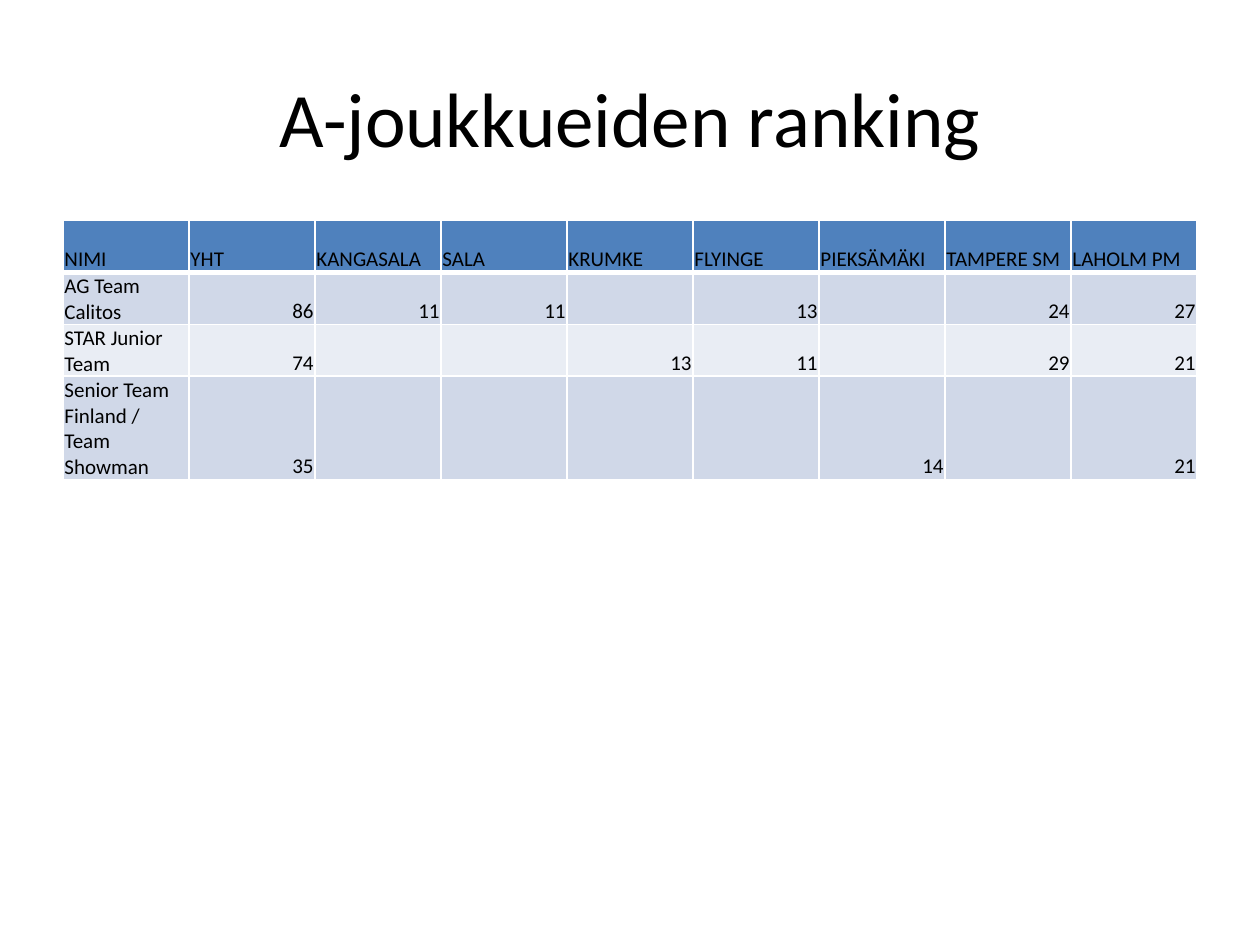
from lxml import etree
from pptx import Presentation
from pptx.dml.color import RGBColor
from pptx.enum.text import MSO_ANCHOR, PP_ALIGN
from pptx.oxml.ns import qn
from pptx.util import Cm, Pt

MIDDLE, BOTTOM = MSO_ANCHOR.MIDDLE, MSO_ANCHOR.BOTTOM
LEFT, CENTER, RIGHT = PP_ALIGN.LEFT, PP_ALIGN.CENTER, PP_ALIGN.RIGHT

BLACK = RGBColor(0x00, 0x00, 0x00)
WHITE = RGBColor(0xFF, 0xFF, 0xFF)
HEADER_BLUE = RGBColor(0x4F, 0x81, 0xBD)
BANDS = (RGBColor(0xD0, 0xD8, 0xE8), RGBColor(0xE9, 0xED, 0xF4))
FONT = "Calibri"

HEADER = ["NIMI", "YHT", "KANGASALA", "SALA", "KRUMKE", "FLYINGE",
          "PIEKSÄMÄKI", "TAMPERE SM", "LAHOLM PM"]
TEAMS = [
    ["AG Team Calitos", 86, 11, 11, None, 13, None, 24, 27],
    ["STAR Junior Team", 74, None, None, 13, 11, None, 29, 21],
    ["Senior Team Finland / Team Showman", 35, None, None, None, None, 14, None, 21],
]
ROW_SHARES = [1, 1, 1, 2]  # the last team name takes twice the height


def add_run(paragraph, text, size, align):
    paragraph.alignment = align
    run = paragraph.add_run()
    run.text = text
    run.font.name = FONT
    run.font.size = Pt(size)
    run.font.bold = False
    run.font.color.rgb = BLACK


def add_title(slide, left, top, width, height):
    title = slide.shapes.add_textbox(left, top, width, height).text_frame
    title.word_wrap = True
    title.vertical_anchor = MIDDLE
    add_run(title.paragraphs[0], "A-joukkueiden ranking", 44, CENTER)


def set_borders(cell, top, bottom):
    properties = cell._tc.get_or_add_tcPr()
    for side, points in (("L", 1), ("R", 1), ("T", top), ("B", bottom)):
        line = etree.SubElement(properties, qn(f"a:ln{side}"), w=str(Pt(points)))
        fill = etree.SubElement(line, qn("a:solidFill"))
        etree.SubElement(fill, qn("a:srgbClr"), val=str(WHITE))


def add_ranking(slide, left, top, width, height):
    rows = [HEADER] + TEAMS
    ranking = slide.shapes.add_table(
        len(rows), len(HEADER), left, top, width, height).table
    ranking.first_row = False
    ranking.horz_banding = False
    for column in ranking.columns:
        column.width = width // len(HEADER)

    for r, values in enumerate(rows):
        ranking.rows[r].height = height * ROW_SHARES[r] // sum(ROW_SHARES)
        for c, value in enumerate(values):
            cell = ranking.cell(r, c)
            # A thick rule divides the header from the teams
            set_borders(cell, top=3 if r == 1 else 1, bottom=3 if r == 0 else 1)
            cell.fill.solid()
            cell.fill.fore_color.rgb = BANDS[(r - 1) % 2] if r else HEADER_BLUE
            cell.vertical_anchor = BOTTOM
            cell.margin_left = cell.margin_right = cell.margin_top = Cm(0.03)
            cell.margin_bottom = 0
            if value is not None:
                align = LEFT if isinstance(value, str) else RIGHT
                add_run(cell.text_frame.paragraphs[0], str(value), 12, align)


def main():
    presentation = Presentation()
    presentation.slide_width, presentation.slide_height = Cm(25.4), Cm(19.05)
    slide = presentation.slides.add_slide(presentation.slide_layouts[6])
    add_title(slide, Cm(1.27), Cm(0.76), Cm(22.86), Cm(3.18))
    add_ranking(slide, Cm(1.27), Cm(4.45), Cm(22.86), Cm(5.2))
    presentation.save("out.pptx")


if __name__ == "__main__":
    main()
